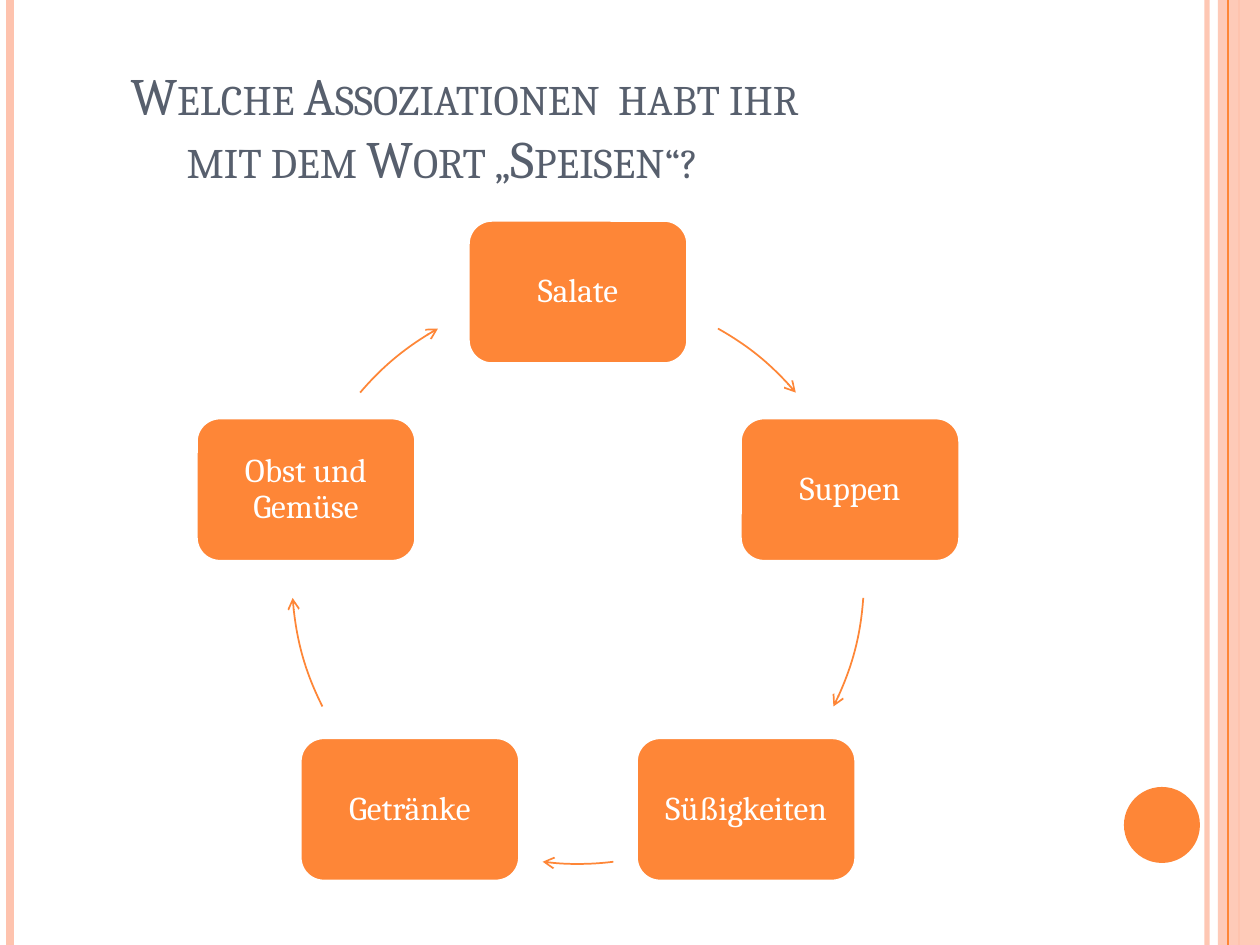
from math import cos, radians, sin

from pptx import Presentation
from pptx.dml.color import RGBColor
from pptx.enum.shapes import MSO_CONNECTOR, MSO_SHAPE as SHAPE
from pptx.enum.text import MSO_ANCHOR as ANCHOR, MSO_AUTO_SIZE, PP_ALIGN as ALIGN
from pptx.oxml.ns import qn
from pptx.util import Pt
from lxml.etree import SubElement

PX = 914400 / 126
ORANGE = RGBColor(0xFE, 0x86, 0x37)
PEACH = RGBColor(0xFE, 0xC3, 0xAE)
SLATE = RGBColor(0x57, 0x5F, 0x6D)
WHITE = RGBColor(0xFF, 0xFF, 0xFF)
FONT = "Cambria"


def px(*lengths):
    """Turn pixel lengths into EMU."""
    return [round(n * PX) for n in lengths]


def set_alpha(element, percent):
    color = next(element.iter(qn("a:srgbClr")))
    SubElement(color, qn("a:alpha")).set("val", str(percent * 1000))


prs = Presentation()
prs.slide_width, prs.slide_height = px(1260, 945)
slide = prs.slides.add_slide(prs.slide_layouts[5])
shapes = slide.shapes

# Side stripes and the round badge
band = shapes.add_shape(SHAPE.RECTANGLE, *px(1218, 0, 42, 945))
badge = shapes.add_shape(SHAPE.OVAL, *px(1124, 787, 76, 76))
for sp, color in [(band, PEACH), (badge, ORANGE)]:
    sp.shadow.inherit = False
    sp.fill.solid()
    sp.fill.fore_color.rgb = color
    sp.line.fill.background()
set_alpha(band.fill._xPr, 87)

for x, color, width, alpha in [
    (1207, PEACH, 3, 93),
    (10, PEACH, 4.5, 100),
    (1228, ORANGE, 1.5, 100),
    (1239, PEACH, 0.75, 100),
]:
    stripe = shapes.add_connector(MSO_CONNECTOR.STRAIGHT, *px(x, 0, x, 945))
    stripe.line.color.rgb = color
    stripe.line.width = Pt(width)
    if alpha < 100:
        set_alpha(stripe.line._ln, alpha)
    SubElement(stripe._element.spPr, qn("a:effectLst"))

# Title, second line set in by a hanging indent
title = shapes.title
title.left, title.top, title.width, title.height = px(63, 38, 1029, 157)
tf = title.text_frame
tf.text = "Welche Assoziationen  habt ihr\vmit dem Wort „Speisen“?"
tf.word_wrap = True
tf.auto_size = MSO_AUTO_SIZE.NONE
tf.vertical_anchor = ANCHOR.BOTTOM
p = tf.paragraphs[0]
p.alignment = ALIGN.LEFT
margin, indent = px(111, -56)
pPr = p._p.get_or_add_pPr()
pPr.set("marL", str(margin))
pPr.set("indent", str(indent))
for r in p.runs:
    r.font.name = FONT
    r.font.size = Pt(30)
    r.font.color.rgb = SLATE
    r._r.get_or_add_rPr().set("cap", "small")

# Cycle: five boxes on a circle, angles clockwise from three o'clock
CX, CY, RADIUS = 578, 578, 286
BOX_W, BOX_H = 220, 144
WORDS = ["Salate", "Suppen", "Süßigkeiten", "Getränke", "Obst und Gemüse"]
ARROWS = [(299.3, 319.6), (4, 26.7), (82.9, 97.1), (153.3, 176), (220.4, 240.7)]

for i, (word, (start, end)) in enumerate(zip(WORDS, ARROWS)):
    angle = radians(72 * i - 90)
    left = CX + RADIUS * cos(angle) - BOX_W / 2
    top = CY + RADIUS * sin(angle) - BOX_H / 2
    box = shapes.add_shape(SHAPE.ROUNDED_RECTANGLE, *px(left, top, BOX_W, BOX_H))
    box.shadow.inherit = False
    box.fill.solid()
    box.fill.fore_color.rgb = ORANGE
    box.line.color.rgb = WHITE
    box.line.width = Pt(2)
    tf = box.text_frame
    tf.text = word
    tf.word_wrap = True
    tf.vertical_anchor = ANCHOR.MIDDLE
    tf.margin_left, tf.margin_right, tf.margin_top, tf.margin_bottom = px(10, 10, 10, 10)
    p = tf.paragraphs[0]
    p.alignment = ALIGN.CENTER
    p.line_spacing = 0.9
    font = p.runs[0].font
    font.name = FONT
    font.size = Pt(19)
    font.color.rgb = WHITE

    arc = shapes.add_shape(
        SHAPE.ARC, *px(CX - RADIUS, CY - RADIUS, 2 * RADIUS, 2 * RADIUS))
    arc.shadow.inherit = False
    # Arc angles are stored in 60000ths of a degree, adjustments in 100000ths
    arc.adjustments[0] = start * 0.6
    arc.adjustments[1] = end * 0.6
    arc.fill.background()
    arc.line.color.rgb = ORANGE
    arc.line.width = Pt(1)
    SubElement(arc.line._ln, qn("a:tailEnd")).set("type", "arrow")

prs.save("out.pptx")
